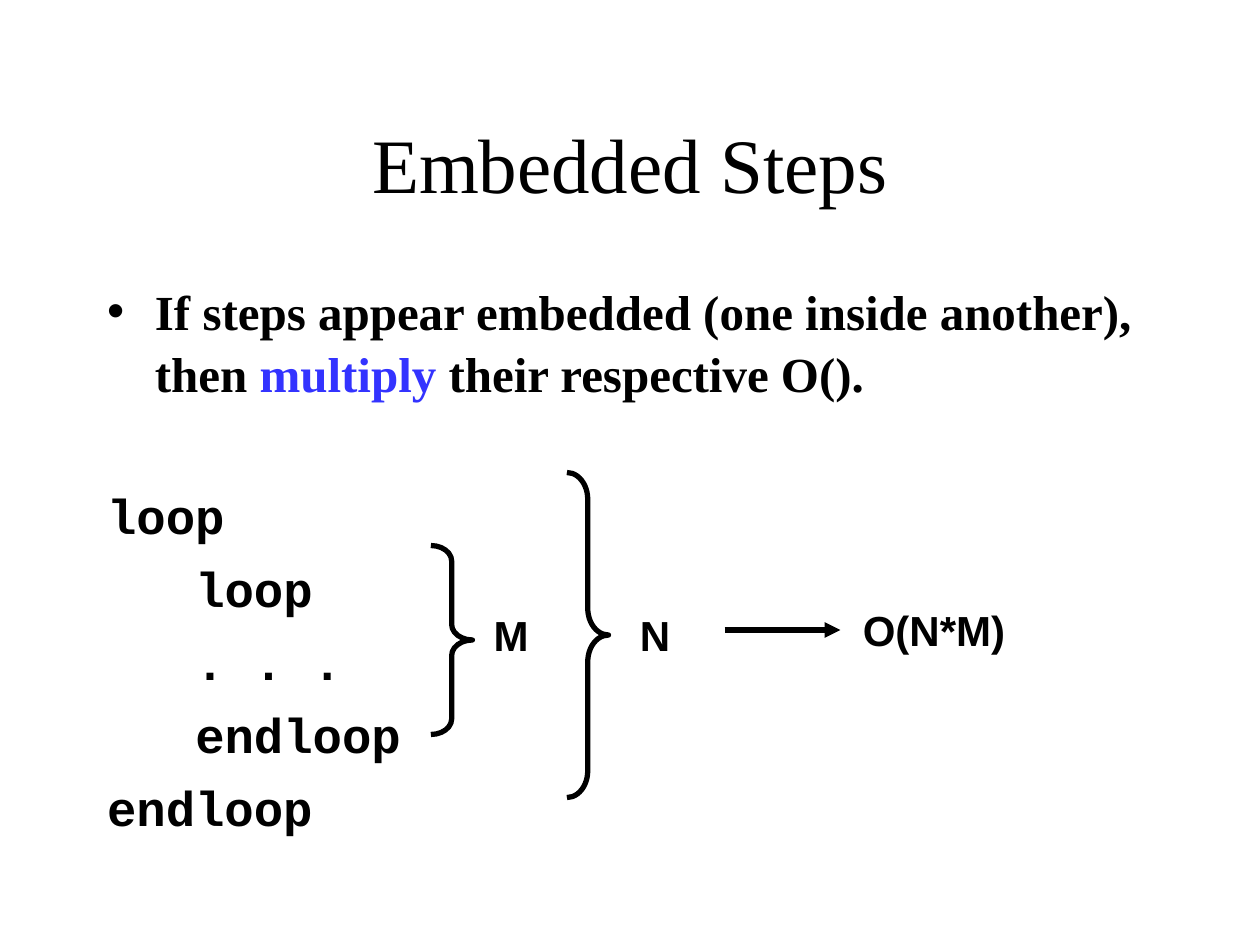
from lxml import etree
from pptx import Presentation
from pptx import util as u
from pptx.dml.color import RGBColor
from pptx.enum import shapes, text
from pptx.oxml.ns import qn

BLACK = RGBColor(0x00, 0x00, 0x00)
BLUE = RGBColor(0x33, 0x33, 0xFF)
WHITE = RGBColor(0xFF, 0xFF, 0xFF)

TITLE = {"name": "Times New Roman", "size": u.Pt(44), "bold": False}
BODY = {"name": "Times New Roman", "size": u.Pt(28), "bold": True}
CODE = {"name": "Courier New", "size": u.Pt(28), "bold": True}
LABEL = {"name": "Arial", "size": u.Pt(24), "bold": True}


class SlideBuilder:
    """Holds the line style and the current slide."""

    line_width = u.Pt(3)

    def __init__(self, presentation):
        self.slide = presentation.slides.add_slide(presentation.slide_layouts[1])
        self.slide.background.fill.solid()
        self.slide.background.fill.fore_color.rgb = WHITE

    def place(self, shape, left, top, width, height):
        bounds = {"left": left, "top": top, "width": width, "height": height}
        for name, value in bounds.items():
            setattr(shape, name, u.Inches(value))

    def run(self, paragraph, words, style, color=BLACK):
        run = paragraph.add_run()
        run.text = words
        for name, value in style.items():
            setattr(run.font, name, value)
        run.font.color.rgb = color

    def title(self, words, *bounds):
        shape = self.slide.shapes.title
        self.place(shape, *bounds)
        shape.text_frame.vertical_anchor = text.MSO_ANCHOR.MIDDLE
        paragraph = shape.text_frame.paragraphs[0]
        paragraph.alignment = text.PP_ALIGN.CENTER
        self.run(paragraph, words, TITLE)

    def body(self, *bounds):
        shape = self.slide.placeholders[1]
        self.place(shape, *bounds)
        shape.text_frame.auto_size = text.MSO_AUTO_SIZE.NONE
        return shape.text_frame

    def item(self, paragraph, runs, style, before, margin, hanging=0, bullet=None):
        paragraph.space_before = u.Pt(before)
        paragraph.line_spacing = 1.05
        properties = paragraph._p.get_or_add_pPr()
        properties.set("marL", str(u.Inches(margin)))
        properties.set("indent", str(-u.Inches(hanging)))
        if bullet:
            etree.SubElement(properties, qn("a:buChar"), char=bullet)
        else:
            etree.SubElement(properties, qn("a:buNone"))
        for words, color in runs:
            self.run(paragraph, words, style, color)

    def brace(self, left, top, height, curve):
        shape = self.slide.shapes.add_shape(
            shapes.MSO_SHAPE.RIGHT_BRACE,
            *map(u.Inches, (left, top, 0.33, height)))
        shape.adjustments[0] = curve
        shape.adjustments[1] = 0.5
        shape.shadow.inherit = False
        shape.fill.background()
        shape.line.color.rgb = BLACK
        shape.line.width = self.line_width

    def label(self, words, *bounds):
        shape = self.slide.shapes.add_textbox(*map(u.Inches, bounds))
        shape.text_frame.word_wrap = False
        shape.text_frame.auto_size = text.MSO_AUTO_SIZE.SHAPE_TO_FIT_TEXT
        self.run(shape.text_frame.paragraphs[0], words, LABEL)

    def arrow(self, *ends):
        connector = self.slide.shapes.add_connector(
            shapes.MSO_CONNECTOR.STRAIGHT, *map(u.Inches, ends))
        connector.line.color.rgb = BLACK
        connector.line.width = self.line_width
        etree.SubElement(connector.line._get_or_add_ln(), qn("a:tailEnd"),
                         type="triangle")
        etree.SubElement(connector._element.spPr, qn("a:effectLst"))


def main():
    presentation = Presentation()
    presentation.slide_width = u.Inches(10)
    presentation.slide_height = u.Inches(7.5)
    builder = SlideBuilder(presentation)

    # Title and rule
    builder.title("Embedded Steps", 0.75, 0.67, 8.5, 1.25)
    frame = builder.body(0.75, 2.16, 8.75, 4.5)
    rule = [("If steps appear embedded (one inside another), then ", BLACK),
            ("multiply", BLUE),
            (" their respective O().", BLACK)]
    builder.item(frame.paragraphs[0], rule, BODY, 0, 0.38, 0.38, "•")

    # Nested loops: three characters of indent per level
    code = [("loop", 0), ("loop", 1), (". . .", 1), ("endloop", 1), ("endloop", 0)]
    for index, (words, level) in enumerate(code):
        before = 6.4 if index else 46
        builder.item(frame.add_paragraph(), [(words, BLACK)], CODE,
                     before, 0.7 * level)

    # Braces for the inner and outer loop
    builder.brace(3.42, 4.33, 1.5, 0.375)
    builder.brace(4.5, 3.75, 2.58, 0.646)

    # Loop counts and resulting order
    builder.label("M", 3.82, 4.79, 0.48, 0.5)
    builder.label("N", 4.98, 4.79, 0.44, 0.5)
    builder.arrow(5.75, 5, 6.67, 5)
    builder.label("O(N*M)", 6.75, 4.75, 1.33, 0.5)

    presentation.save("out.pptx")


if __name__ == "__main__":
    main()
